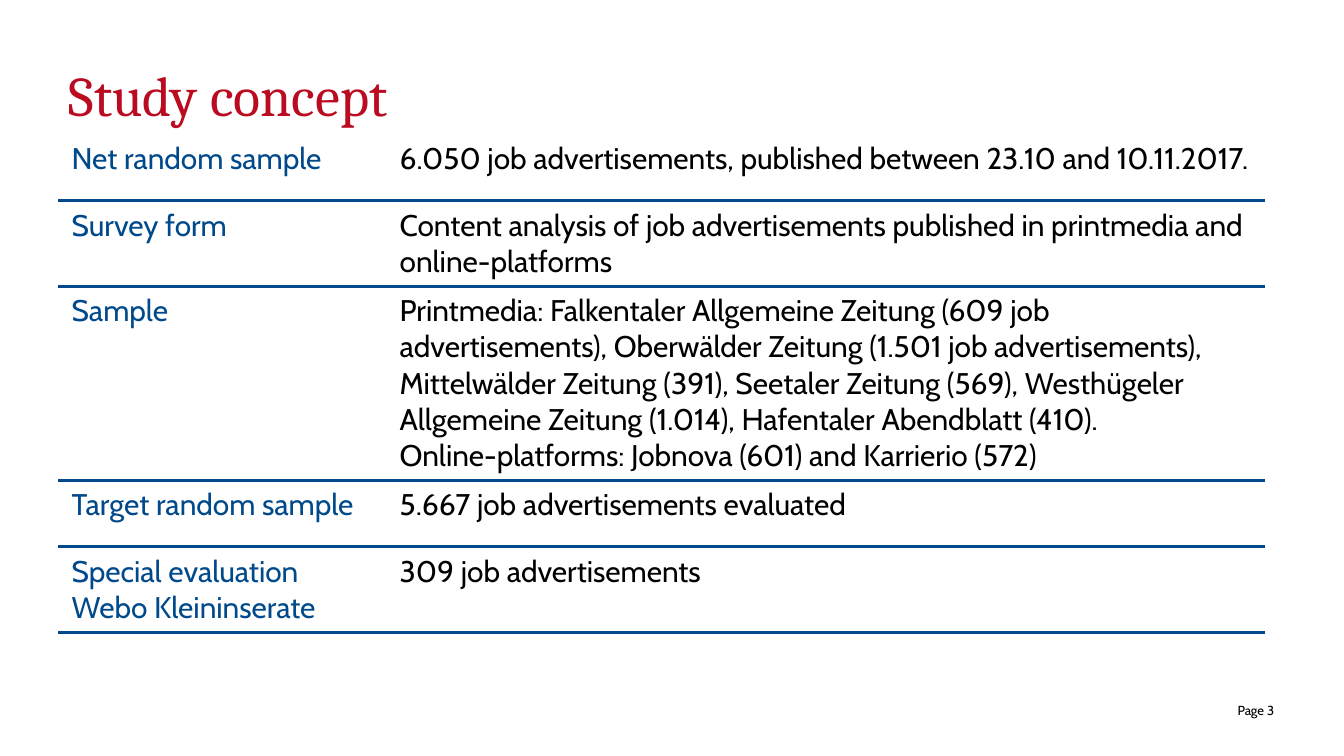
from lxml import etree
from pptx import Presentation
from pptx.dml.color import RGBColor
from pptx.enum.text import MSO_ANCHOR, PP_ALIGN
from pptx.oxml.ns import qn
from pptx.util import Cm, Pt

TOP = MSO_ANCHOR.TOP
LEFT, RIGHT = PP_ALIGN.LEFT, PP_ALIGN.RIGHT
BLUE, RED, BLACK = "00498B", "BB0B20", "000000"


def write(tf, text, size=16, font="Cabin", color=BLACK, align=LEFT):
    """Fill a text frame, one paragraph per line of text."""
    tf.word_wrap = True
    for i, line in enumerate(text.split("\n")):
        p = tf.paragraphs[0] if i == 0 else tf.add_paragraph()
        p.alignment = align
        r = p.add_run()
        r.text = line
        r.font.size = Pt(size)
        r.font.name = font
        r.font.color.rgb = RGBColor.from_string(color)


def add_border(cell, side, color=None):
    """Draw one cell border, or hide it when no colour is given."""
    ln = etree.SubElement(cell._tc.get_or_add_tcPr(), qn("a:ln" + side), w=str(Pt(1.5)))
    if color:
        fill = etree.SubElement(ln, qn("a:solidFill"))
        etree.SubElement(fill, qn("a:srgbClr"), val=color)
    else:
        etree.SubElement(ln, qn("a:noFill"))


prs = Presentation()
prs.slide_width, prs.slide_height = Cm(25.4), Cm(14.28)
s = prs.slides.add_slide(prs.slide_layouts[5])

# Title
title = s.shapes.title
title.left, title.top, title.width, title.height = Cm(1.3), Cm(1.14), Cm(22.8), Cm(2.38)
tf = title.text_frame
tf.margin_left = tf.margin_top = tf.margin_right = tf.margin_bottom = 0
tf.vertical_anchor = TOP
write(tf, "Study concept", size=30, font="Cambria", color=RED)

# Study facts: label, description, row height in cm
rows = [
    ("Net random sample",
     "6.050 job advertisements, published between 23.10 and 10.11.2017.", 1.25),
    ("Survey form",
     "Content analysis of job advertisements published in printmedia and "
     "online-platforms", 1.62),
    ("Sample",
     "Printmedia: Falkentaler Allgemeine Zeitung (609 job advertisements), "
     "Oberwälder Zeitung (1.501 job advertisements), Mittelwälder Zeitung (391), "
     "Seetaler Zeitung (569), Westhügeler Allgemeine Zeitung (1.014), "
     "Hafentaler Abendblatt (410).\n"
     "Online-platforms: Jobnova (601) and Karrierio (572)", 3.66),
    ("Target random sample", "5.667 job advertisements evaluated", 1.25),
    ("Special evaluation Webo Kleininserate", "309 job advertisements", 1.62),
]
height = sum(row[2] for row in rows)
table = s.shapes.add_table(len(rows), 2, Cm(1.1), Cm(2.54), Cm(22.8), Cm(height)).table
table.first_row = table.horz_banding = False
table.columns[0].width, table.columns[1].width = Cm(6.2), Cm(16.6)

for i, (label, description, row_height) in enumerate(rows):
    table.rows[i].height = Cm(row_height)
    for j, (text, color) in enumerate([(label, BLUE), (description, BLACK)]):
        cell = table.cell(i, j)
        add_border(cell, "L")
        add_border(cell, "R")
        add_border(cell, "T", BLUE if i else None)
        add_border(cell, "B", BLUE)
        cell.fill.background()
        cell.vertical_anchor = TOP
        write(cell.text_frame, text, color=color)

# Page number
sp = s.shapes.add_textbox(Cm(21.54), Cm(13.13), Cm(2.54), Cm(0.4))
tf = sp.text_frame
tf.margin_left = tf.margin_right = tf.margin_bottom = 0
tf.margin_top = Cm(0.13)
write(tf, "Page 3", size=7, align=RIGHT)

prs.save("out.pptx")
